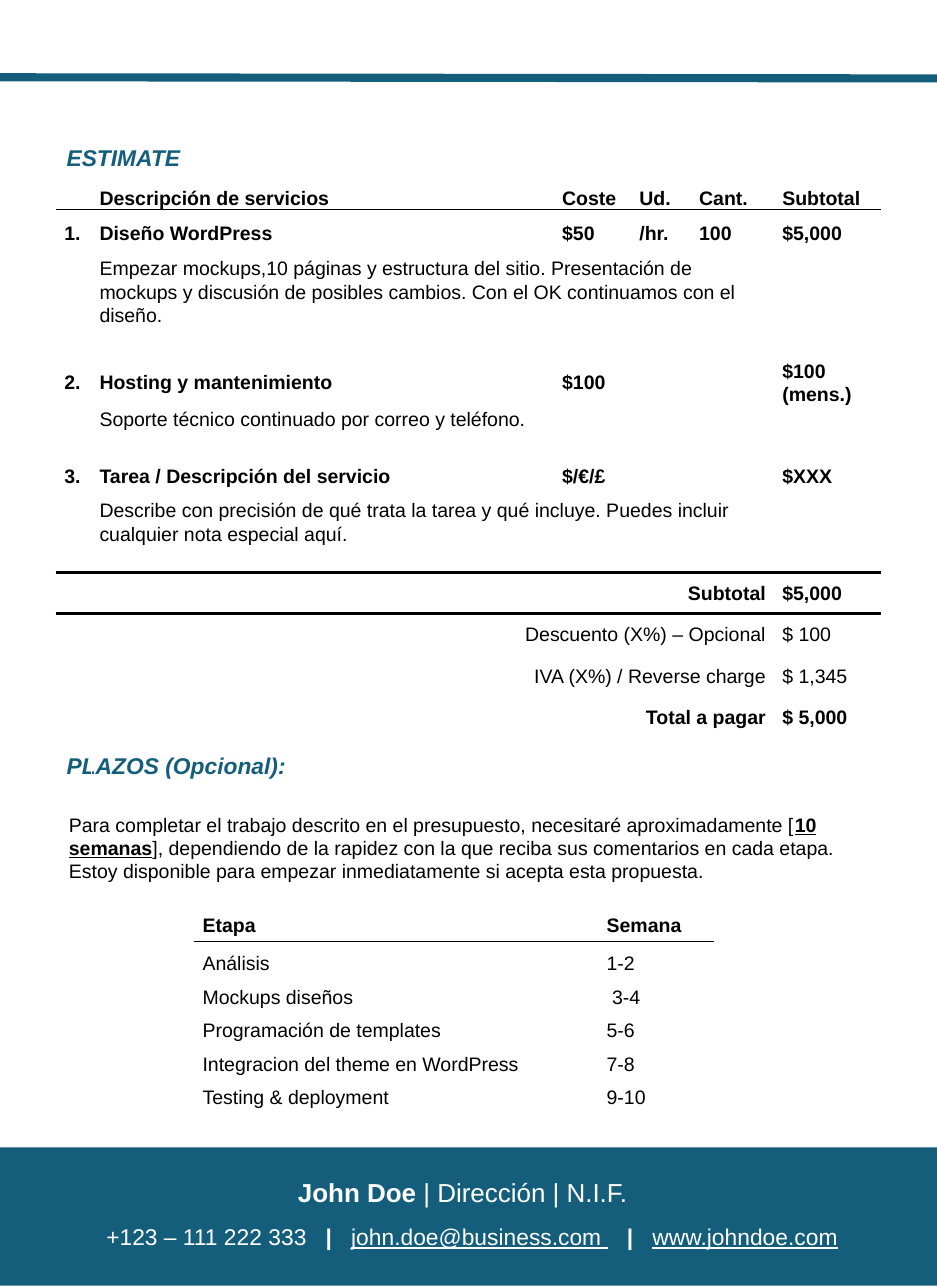
from lxml import etree
from pptx import Presentation
from pptx import util as u
from pptx.dml.color import RGBColor
from pptx.enum import shapes, text
from pptx.oxml.ns import qn

TEAL, BLACK, WHITE = "145E7B", "000000", "FFFFFF"
MID, LOW, TOP = (text.MSO_ANCHOR.MIDDLE, text.MSO_ANCHOR.BOTTOM,
                 text.MSO_ANCHOR.TOP)
LEFT, RIGHT, CENTER = text.PP_ALIGN.LEFT, text.PP_ALIGN.RIGHT, text.PP_ALIGN.CENTER

SERVICE_COLS = [0.3, 3.95, 0.66, 0.51, 0.71, 0.91]
SERVICE_HEADER = ["", "Descripción de servicios", "Coste", "Ud.", "Cant.", "Subtotal"]
# Each service: its row, its description, and the heights of both rows
SERVICES = [
    (["1.", "Diseño WordPress", "$50", "/hr.", "100", "$5,000"],
     "Empezar mockups,10 páginas y estructura del sitio. Presentación de mockups "
     "y discusión de posibles cambios. Con el OK continuamos con el diseño.",
     0.4, 0.86),
    (["2.", "Hosting y mantenimiento", "$100", "", "", "$100\n(mens.)"],
     "Soporte técnico continuado por correo y teléfono.", 0.42, 0.39),
    (["3.", "Tarea / Descripción del servicio", "$/€/£", "", "", "$XXX"],
     "Describe con precisión de qué trata la tarea y qué incluye. Puedes incluir "
     "cualquier nota especial aquí.", 0.39, 0.63),
]
TOTALS = [
    ("Subtotal", "$5,000", True),
    ("Descuento (X%) – Opcional", "$ 100", False),
    ("IVA (X%) / Reverse charge", "$ 1,345", False),
    ("Total a pagar", "$ 5,000", True),
    ("", "", False),
]
STAGES = [
    ("Etapa", "Semana"),
    ("Análisis", "1-2"),
    ("Mockups diseños", " 3-4"),
    ("Programación de templates", "5-6"),
    ("Integracion del theme en WordPress", "7-8"),
    ("Testing & deployment", "9-10"),
]


def rgb(color):
    return RGBColor.from_string(color)


def add_run(p, words, size=12, color=BLACK, bold=False, italic=False, underline=False):
    r = p.add_run()
    r.text = words
    f = r.font
    f.name, f.size, f.color.rgb = "Arial", u.Pt(size), rgb(color)
    f.bold, f.italic, f.underline = bold, italic, underline


def add_text_box(s, left, top, width, height, wrap=True):
    tf = s.shapes.add_textbox(*map(u.Inches, (left, top, width, height))).text_frame
    tf.word_wrap = wrap
    return tf


def add_heading(s, top, width, words):
    tf = add_text_box(s, 0.47, top, width, 0.34, wrap=False)
    add_run(tf.paragraphs[0], words, 14, TEAL, bold=True, italic=True)


def add_top_rule(s):
    rule = s.shapes.add_connector(shapes.MSO_CONNECTOR.STRAIGHT, u.Inches(0),
                                  u.Inches(0.66), u.Inches(8), u.Inches(0.67))
    rule.line.color.rgb, rule.line.width = rgb(TEAL), u.Pt(5)
    etree.SubElement(rule._element.spPr, qn("a:effectLst"))


def add_footer(s):
    band = s.shapes.add_shape(shapes.MSO_SHAPE.RECTANGLE, u.Inches(-0.02),
                              u.Inches(9.8), u.Inches(8.03), u.Inches(1.18))
    band.shadow.inherit = False
    band.fill.solid()
    band.fill.fore_color.rgb = rgb(TEAL)
    band.line.fill.background()

    tf = add_text_box(s, 0, 9.98, 8.02, 1)
    name, contact = tf.paragraphs[0], tf.add_paragraph()
    for p, side, margin in ((name, "marR", 0.12), (contact, "marL", 0.16)):
        p.alignment, p.line_spacing, p.space_after = CENTER, 1.07, u.Pt(8)
        p._p.get_or_add_pPr().set(side, str(u.Inches(margin)))
    add_run(name, "John Doe ", 16, WHITE, bold=True)
    add_run(name, "| Dirección | N.I.F.", 16, WHITE)
    add_run(contact, "+123 – 111 222 333", 14, WHITE)
    for address in ("john.doe@business.com ", "www.johndoe.com"):
        add_run(contact, "   |   ", 14, WHITE, bold=True)
        add_run(contact, address, 14, WHITE, underline=True)


def add_table(s, left, top, cols, rows):
    frame = s.shapes.add_table(len(rows), len(cols), u.Inches(left), u.Inches(top),
                               u.Inches(sum(cols)), u.Inches(sum(rows)))
    table = frame.table
    table.first_row = table.horz_banding = False
    for col, width in zip(table.columns, cols):
        col.width = u.Inches(width)
    for row, height in zip(table.rows, rows):
        row.height = u.Inches(height)
    for cell in table.iter_cells():
        cell.margin_left = cell.margin_right = u.Inches(0.07)
        cell.margin_top = cell.margin_bottom = 0
        cell.fill.background()
        end = etree.SubElement(cell.text_frame.paragraphs[0]._p, qn("a:endParaRPr"))
        end.set("sz", "1200")
    return table


def fill_cell(cell, words, bold=False, anchor=MID, align=LEFT):
    cell.vertical_anchor = anchor
    if not words:
        return
    tf = cell.text_frame
    for i, line in enumerate(words.split("\n")):
        p = tf.add_paragraph() if i else tf.paragraphs[0]
        p.alignment, p.line_spacing = align, 1.07
        add_run(p, line, bold=bold)


def rule_below(table, row, width):
    """Draw the border shared by this row and the next one."""
    for r, side in ((row, "a:lnB"), (row + 1, "a:lnT")):
        for cell in table.rows[r].cells:
            ln = etree.Element(qn(side), w=str(u.Pt(width)))
            fill = etree.SubElement(ln, qn("a:solidFill"))
            etree.SubElement(fill, qn("a:srgbClr"), val=BLACK)
            tcPr = cell._tc.get_or_add_tcPr()
            # Top borders must precede bottom ones, and both precede the fill
            position = 0 if side == "a:lnT" else len(tcPr.findall(qn("a:lnT")))
            tcPr.insert(position, ln)


def add_services(s):
    heights = [0.22]
    for *_, title_height, note_height in SERVICES:
        heights += [title_height, note_height]
    totals_row = len(heights)
    table = add_table(s, 0.48, 1.57, SERVICE_COLS, heights + [0.354] * len(TOTALS))

    for c, words in enumerate(SERVICE_HEADER):
        fill_cell(table.cell(0, c), words, True, LOW)
    for i, (values, note, *_) in enumerate(SERVICES):
        row = 1 + 2 * i
        for c, words in enumerate(values):
            fill_cell(table.cell(row, c), words, True)
        table.cell(row + 1, 1).merge(table.cell(row + 1, 4))
        fill_cell(table.cell(row + 1, 1), note, anchor=TOP)
    for row, (label, amount, bold) in enumerate(TOTALS, totals_row):
        table.cell(row, 1).merge(table.cell(row, 4))
        fill_cell(table.cell(row, 1), label, bold, align=RIGHT)
        fill_cell(table.cell(row, 5), amount, bold)
    rule_below(table, 0, 1)
    rule_below(table, totals_row - 1, 2.25)


def add_schedule(s):
    table = add_table(s, 1.66, 7.76, [3.42, 1.01], [0.28] + [0.286] * (len(STAGES) - 1))
    for row, stage in enumerate(STAGES):
        for c, words in enumerate(stage):
            fill_cell(table.cell(row, c), words, row == 0, LOW if row else MID)
        table.cell(row, 1).margin_left = u.Inches(0.1)
    rule_below(table, 0, 1)


def add_deadline(s):
    p = add_text_box(s, 0.49, 6.89, 7.04, 0.71).paragraphs[0]
    add_run(p, "Para completar el trabajo descrito en el presupuesto, "
               "necesitaré aproximadamente [")
    add_run(p, "10 semanas", bold=True, underline=True)
    add_run(p, "], dependiendo de la rapidez con la que reciba sus comentarios en cada "
               "etapa. Estoy disponible para empezar inmediatamente si acepta esta "
               "propuesta.")


def main():
    prs = Presentation()
    prs.slide_width, prs.slide_height = u.Inches(8), u.Inches(11)
    s = prs.slides.add_slide(prs.slide_layouts[6])
    add_top_rule(s)
    add_footer(s)
    add_heading(s, 1.18, 1.19, "ESTIMATE")
    add_heading(s, 6.37, 2.08, "PLAZOS (Opcional):")
    add_deadline(s)
    add_schedule(s)
    add_services(s)
    prs.save("out.pptx")


if __name__ == "__main__":
    main()
